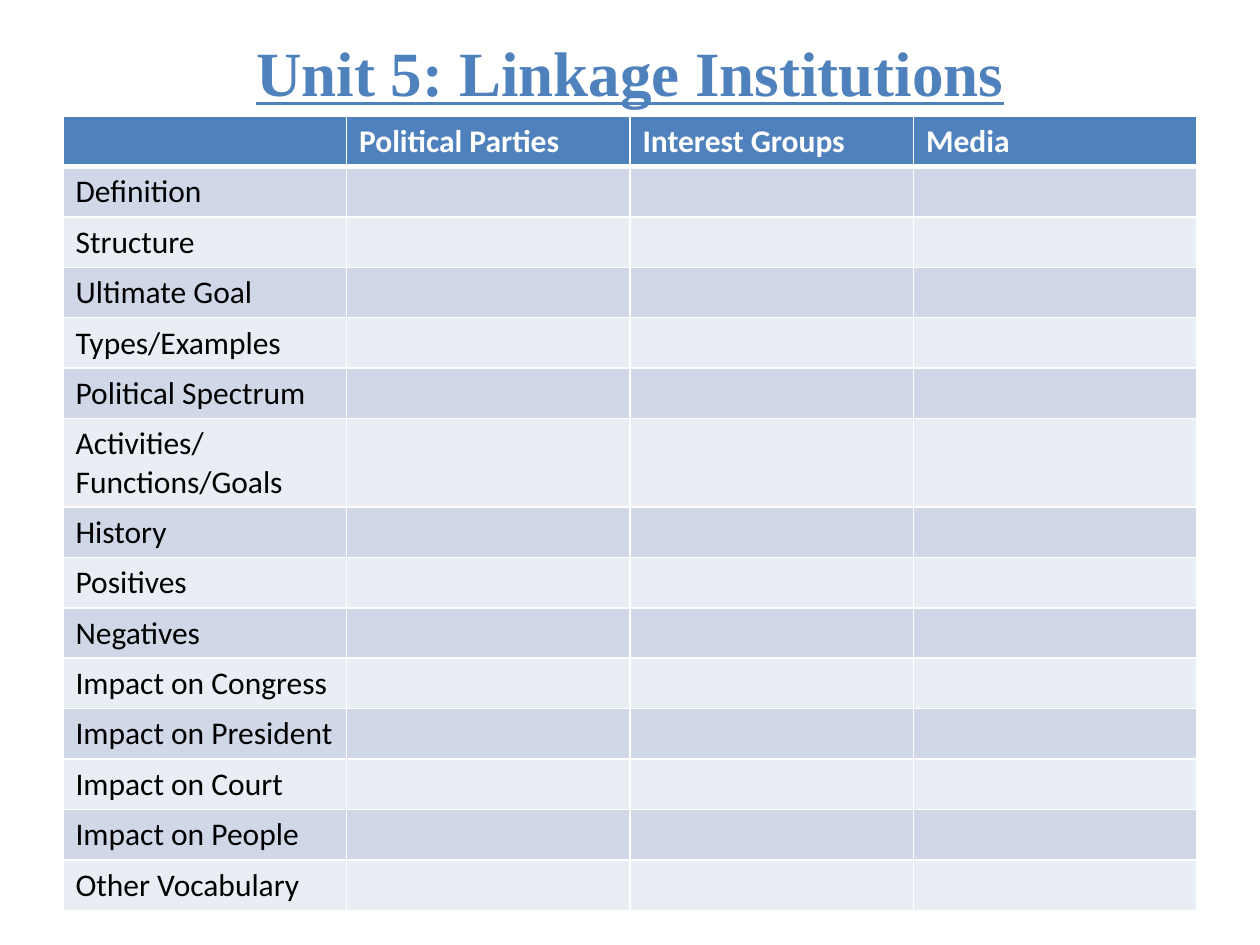
import pptx
import pptx.dml.color
import pptx.enum.text
import pptx.oxml
import pptx.oxml.ns
import pptx.util

TITLE = "Unit 5: Linkage Institutions"
HEADINGS = ["", "Political Parties", "Interest Groups", "Media"]
TOPICS = [
    "Definition", "Structure", "Ultimate Goal", "Types/Examples",
    "Political Spectrum", "Activities/Functions/Goals", "History",
    "Positives", "Negatives", "Impact on Congress", "Impact on President",
    "Impact on Court", "Impact on People", "Other Vocabulary",
]
TALL_TOPIC = "Activities/Functions/Goals"
COLORS = {
    "accent": "4F81BD", "dark_band": "D0D8E8", "light_band": "E9EDF4",
    "white": "FFFFFF", "black": "000000",
}
FORMATS = {
    "title": {"name": "Times New Roman", "size": pptx.util.Pt(36),
              "bold": True, "underline": True},
    "heading": {"name": "Calibri", "size": pptx.util.Pt(18), "bold": True},
    "topic": {"name": "Calibri", "size": pptx.util.Pt(18), "bold": False},
}
WIDTH, HEIGHT = 10, 7.5
MARGIN = 0.05 * WIDTH
CONTENT_WIDTH = WIDTH - 2 * MARGIN
TITLE_TOP, TITLE_HEIGHT = 0.3, 0.53
TABLE_TOP = 0.92
ROW_HEIGHT, TALL_ROW_HEIGHT = 0.39, 0.68
THIN, THICK = 1, 3


def rgb(color):
    return pptx.dml.color.RGBColor.from_string(COLORS[color])


def write(paragraph, text, style, color):
    run = paragraph.add_run()
    run.text = text
    for attribute, value in FORMATS[style].items():
        setattr(run.font, attribute, value)
    run.font.color.rgb = rgb(color)


def set_borders(cell, top, bottom):
    """Draw white cell borders; they must come before the fill in the XML."""
    properties = cell._tc.get_or_add_tcPr()
    widths = {"lnL": THIN, "lnR": THIN, "lnT": top, "lnB": bottom}
    for index, (side, width) in enumerate(widths.items()):
        properties.insert(index, pptx.oxml.parse_xml(
            f'<a:{side} {pptx.oxml.ns.nsdecls("a")} w="{pptx.util.Pt(width)}">'
            f'<a:solidFill><a:srgbClr val="{COLORS["white"]}"/></a:solidFill>'
            f'</a:{side}>'))


def add_title(slide):
    box = slide.shapes.add_textbox(*map(pptx.util.Inches, (
        MARGIN, TITLE_TOP, CONTENT_WIDTH, TITLE_HEIGHT)))
    frame = box.text_frame
    frame.word_wrap = True
    frame.vertical_anchor = pptx.enum.text.MSO_ANCHOR.MIDDLE
    paragraph = frame.paragraphs[0]
    paragraph.alignment = pptx.enum.text.PP_ALIGN.CENTER
    write(paragraph, TITLE, "title", "accent")


def add_comparison_table(slide):
    rows = [HEADINGS] + [[topic] + [""] * (len(HEADINGS) - 1) for topic in TOPICS]
    heights = [TALL_ROW_HEIGHT if row[0] == TALL_TOPIC else ROW_HEIGHT for row in rows]
    table = slide.shapes.add_table(len(rows), len(HEADINGS), *map(pptx.util.Inches, (
        MARGIN, TABLE_TOP, CONTENT_WIDTH, sum(heights)))).table
    for column in table.columns:
        column.width = pptx.util.Inches(CONTENT_WIDTH / len(HEADINGS))
    for row_index, (row, height) in enumerate(zip(rows, heights)):
        table.rows[row_index].height = pptx.util.Inches(height)
        if row_index == 0:
            fill, style, color = "accent", "heading", "white"
        else:
            fill = "dark_band" if row_index % 2 else "light_band"
            style, color = "topic", "black"
        for column_index, text in enumerate(row):
            cell = table.cell(row_index, column_index)
            cell.fill.solid()
            cell.fill.fore_color.rgb = rgb(fill)
            set_borders(cell, THICK if row_index == 1 else THIN,
                        THICK if row_index == 0 else THIN)
            if text:
                write(cell.text_frame.paragraphs[0], text, style, color)


def main():
    presentation = pptx.Presentation()
    presentation.slide_width = pptx.util.Inches(WIDTH)
    presentation.slide_height = pptx.util.Inches(HEIGHT)
    slide = presentation.slides.add_slide(presentation.slide_layouts[6])
    add_title(slide)
    add_comparison_table(slide)
    presentation.save("out.pptx")


if __name__ == "__main__":
    main()
